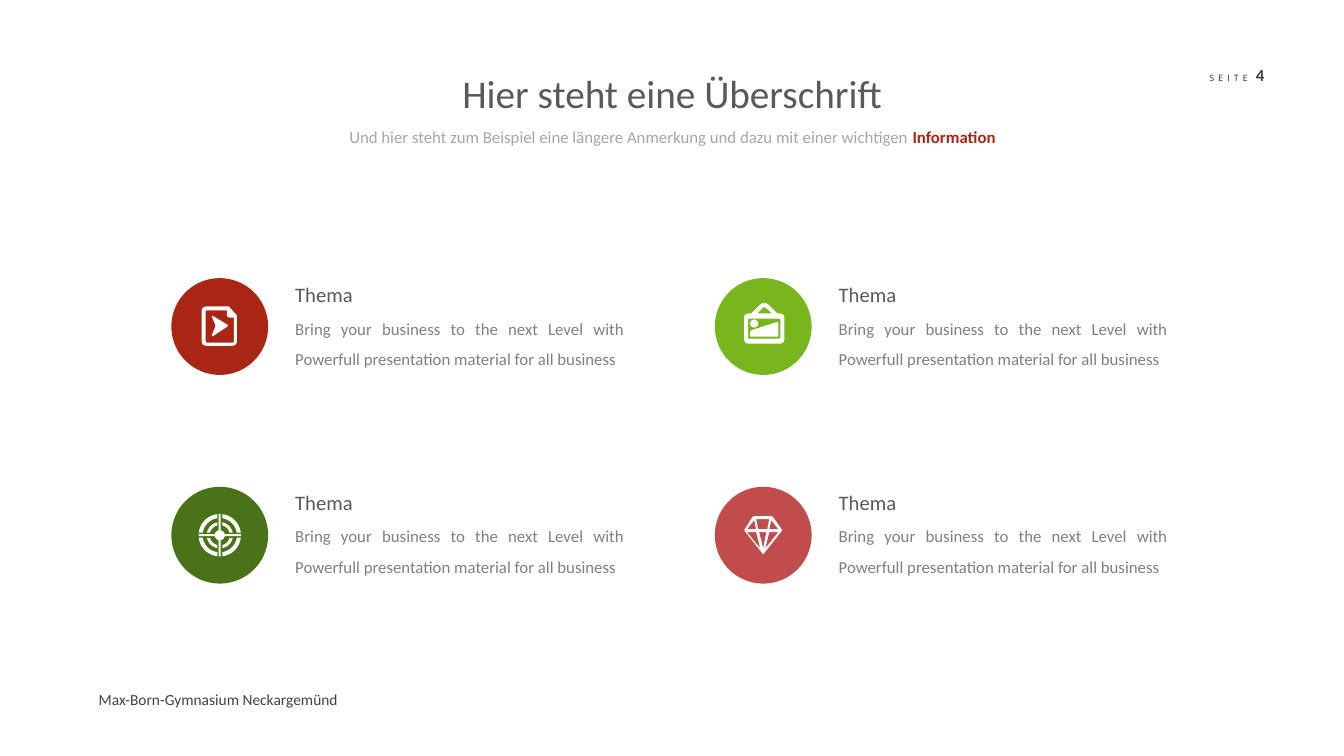
import math

import pptx
import pptx.dml.color
import pptx.enum.shapes
import pptx.enum.text
import pptx.util

Inches = pptx.util.Inches
Align = pptx.enum.text.PP_ALIGN

DARK, HEADING, BODY, NOTE = "404040", "595959", "808080", "A6A6A6"
RED, WHITE = "A92615", "FFFFFF"
TOPIC_TEXT = ("Bring your business to the next Level with "
              "Powerfull presentation material for all business")


def colour(value):
    return pptx.dml.color.RGBColor.from_string(value)


def add_span(para, text, font="Calibri", size=12, color=DARK, bold=False, tracking=0):
    """Append a formatted run; tracking is in points."""
    span = para.add_run()
    span.text = text
    span.font.name = font
    span.font.size = pptx.util.Pt(size)
    span.font.color.rgb = colour(color)
    span.font.bold = bold
    if tracking:
        span._r.get_or_add_rPr().set("spc", str(tracking * 100))


def rounded(*corners, steps=6):
    """Outline through (x, y, radius) corners, each rounded by a quadratic curve."""
    points = []
    for index, (x, y, radius) in enumerate(corners):
        if not radius:
            points.append((x, y))
            continue
        ends = []
        for near_x, near_y, _ in (corners[index - 1], corners[(index + 1) % len(corners)]):
            share = radius / math.hypot(near_x - x, near_y - y)
            ends.append((x + (near_x - x) * share, y + (near_y - y) * share))
        (start_x, start_y), (end_x, end_y) = ends
        for step in range(steps + 1):
            t = step / steps
            points.append(((1 - t) ** 2 * start_x + 2 * t * (1 - t) * x + t * t * end_x,
                           (1 - t) ** 2 * start_y + 2 * t * (1 - t) * y + t * t * end_y))
    return points


def arc(radius, start, end, center=(0, 0), steps=12):
    angles = [start + (end - start) * step / steps for step in range(steps + 1)]
    return [(center[0] + radius * math.cos(a), center[1] + radius * math.sin(a)) for a in angles]


def video_icon():
    page = rounded((-0.18, -0.2, 0.05), (0.09, -0.2, 0), (0.17, -0.11, 0),
                   (0.17, 0.19, 0.05), (-0.18, 0.19, 0.05))
    inside = rounded((-0.14, -0.16, 0.01), (0.07, -0.16, 0), (0.07, -0.09, 0.03),
                     (0.14, -0.09, 0), (0.14, 0.16, 0.02), (-0.14, 0.16, 0.02))
    arrow = rounded((-0.09, -0.12, 0.04), (0.09, -0.01, 0.02),
                    (-0.09, 0.11, 0.04), (-0.04, -0.01, 0.02))
    return [[page, inside], [arrow]]


def picture_icon():
    frame = rounded((-0.19, -0.13, 0.05), (-0.12, -0.13, 0), (0.01, -0.26, 0.07),
                    (0.14, -0.13, 0), (0.21, -0.13, 0.05), (0.21, 0.17, 0.05),
                    (-0.19, 0.17, 0.05))
    hook = rounded((-0.06, -0.13, 0), (0.01, -0.2, 0.02), (0.09, -0.13, 0))
    inside = rounded((-0.15, -0.08, 0.01), (0.17, -0.08, 0.01),
                     (0.17, 0.12, 0.01), (-0.15, 0.12, 0.01))
    sun = arc(0.04, 0, 2 * math.pi, center=(-0.09, -0.03), steps=24)
    hill = rounded((-0.13, 0.04, 0.02), (0.15, -0.05, 0.02),
                   (0.15, 0.1, 0.01), (-0.13, 0.1, 0.01))
    return [[frame, hook, inside], [sun], [hill]]


def target_icon():
    quarter = math.pi / 2
    parts, cross = [], []
    for turn in range(4):
        base = turn * quarter
        for outer, inner in ((0.21, 0.17), (0.13, 0.1)):
            outer_gap, inner_gap = math.asin(0.025 / outer), math.asin(0.025 / inner)
            parts.append([arc(outer, base + outer_gap, base + quarter - outer_gap)
                          + arc(inner, base + quarter - inner_gap, base + inner_gap)])
        tip_gap, hub_gap = math.asin(0.01 / 0.21), math.asin(0.01 / 0.05)
        cross += arc(0.21, base - tip_gap, base + tip_gap, steps=1)
        cross += arc(0.05, base + hub_gap, base + quarter - hub_gap)
    return parts + [[cross]]


def diamond_icon():
    outline = rounded((-0.1, -0.19, 0.02), (0.09, -0.19, 0.02), (0.19, -0.05, 0.01),
                      (0, 0.19, 0.01), (-0.19, -0.05, 0.01))
    facets = [
        [(0.06, -0.16), (0.04, -0.06), (-0.05, -0.06), (-0.07, -0.16)],
        [(-0.09, -0.15), (-0.07, -0.06), (-0.16, -0.06)],
        [(-0.16, -0.03), (-0.07, -0.03), (-0.03, 0.13)],
        [(0, 0.13), (-0.04, -0.03), (0.03, -0.03)],
        [(0.02, 0.13), (0.06, -0.03), (0.15, -0.03)],
        [(0.06, -0.06), (0.08, -0.15), (0.15, -0.06)],
    ]
    return [[outline, *facets]]


class TopicSlide:
    circle_size = 0.96
    text_offset = 1.13

    def __init__(self, deck):
        self.slide = deck.slides.add_slide(deck.slide_layouts[0])
        self.title, self.subtitle = self.slide.placeholders

    def text(self, at, spans, holder=None, align=Align.LEFT, spacing=1.0, wrap=False):
        """Fill a placeholder or a new text box with (text, format) spans."""
        left, top, width, height = map(Inches, at)
        box = holder or self.slide.shapes.add_textbox(left, top, width, height)
        box.left, box.top, box.width, box.height = left, top, width, height
        frame = box.text_frame
        frame.word_wrap = wrap
        frame.auto_size = pptx.enum.text.MSO_AUTO_SIZE.NONE
        frame.vertical_anchor = pptx.enum.text.MSO_ANCHOR.TOP
        para = frame.paragraphs[0]
        para.alignment = align
        para.line_spacing = spacing
        para.space_before = pptx.util.Pt(0)
        for text, style in spans:
            add_span(para, text, **style)

    def paint(self, shape, color):
        shape.shadow.inherit = False
        shape.fill.solid()
        shape.fill.fore_color.rgb = colour(color)
        shape.line.fill.background()

    def icon(self, center_x, center_y, parts):
        """Draw each part; its contours after the first are holes."""
        for contours in parts:
            placed = [[(Inches(center_x + x), Inches(center_y + y)) for x, y in contour]
                      for contour in contours]
            builder = self.slide.shapes.build_freeform(*placed[0][0])
            builder.add_line_segments(placed[0][1:])
            for hole in placed[1:]:
                builder.move_to(*hole[0])
                builder.add_line_segments(hole[1:])
            self.paint(builder.convert_to_shape(), WHITE)

    def topic(self, left, circle_top, text_top, color, parts):
        size = self.circle_size
        circle = self.slide.shapes.add_shape(
            pptx.enum.shapes.MSO_SHAPE.OVAL,
            Inches(left), Inches(circle_top), Inches(size), Inches(size))
        self.paint(circle, color)
        self.icon(left + size / 2, circle_top + size / 2, parts)
        text_left = left + self.text_offset
        self.text((text_left, text_top, 0.77, 0.35),
                  [("Thema", dict(size=14.7, color=HEADING))])
        self.text((text_left, text_top + 0.26, 3.46, 0.71), [(TOPIC_TEXT, dict(color=BODY))],
                  align=Align.JUSTIFY, spacing=1.5, wrap=True)


def main():
    deck = pptx.Presentation()
    deck.slide_width, deck.slide_height = Inches(13.33), Inches(7.5)
    page = TopicSlide(deck)
    page.text((4.48, 0.64, 4.37, 0.57),
              [("Hier steht eine Überschrift", dict(size=28, color=HEADING))],
              holder=page.title, align=Align.CENTER)
    page.text((3.33, 1.21, 6.68, 0.3),
              [("Und hier steht zum Beispiel eine längere Anmerkung und dazu "
                "mit einer wichtigen ", dict(color=NOTE)),
               ("Information", dict(color=RED, bold=True))],
              holder=page.subtitle, align=Align.CENTER)
    page.text((11.9, 0.59, 0.96, 0.3),
              [("SEITE", dict(size=7, tracking=3)), (" ", {}), ("4", dict(bold=True))])
    page.text((0.88, 6.8, 2.59, 0.29),
              [("Max-Born-Gymnasium Neckargemünd", dict(size=11))])

    left, right = 1.7, 7.09
    upper, lower = (2.76, 2.75), (4.83, 4.81)
    page.topic(left, *upper, RED, video_icon())
    page.topic(right, *upper, "79B51D", picture_icon())
    page.topic(left, *lower, "487319", target_icon())
    page.topic(right, *lower, "C04C4C", diamond_icon())
    deck.save("out.pptx")


if __name__ == "__main__":
    main()
